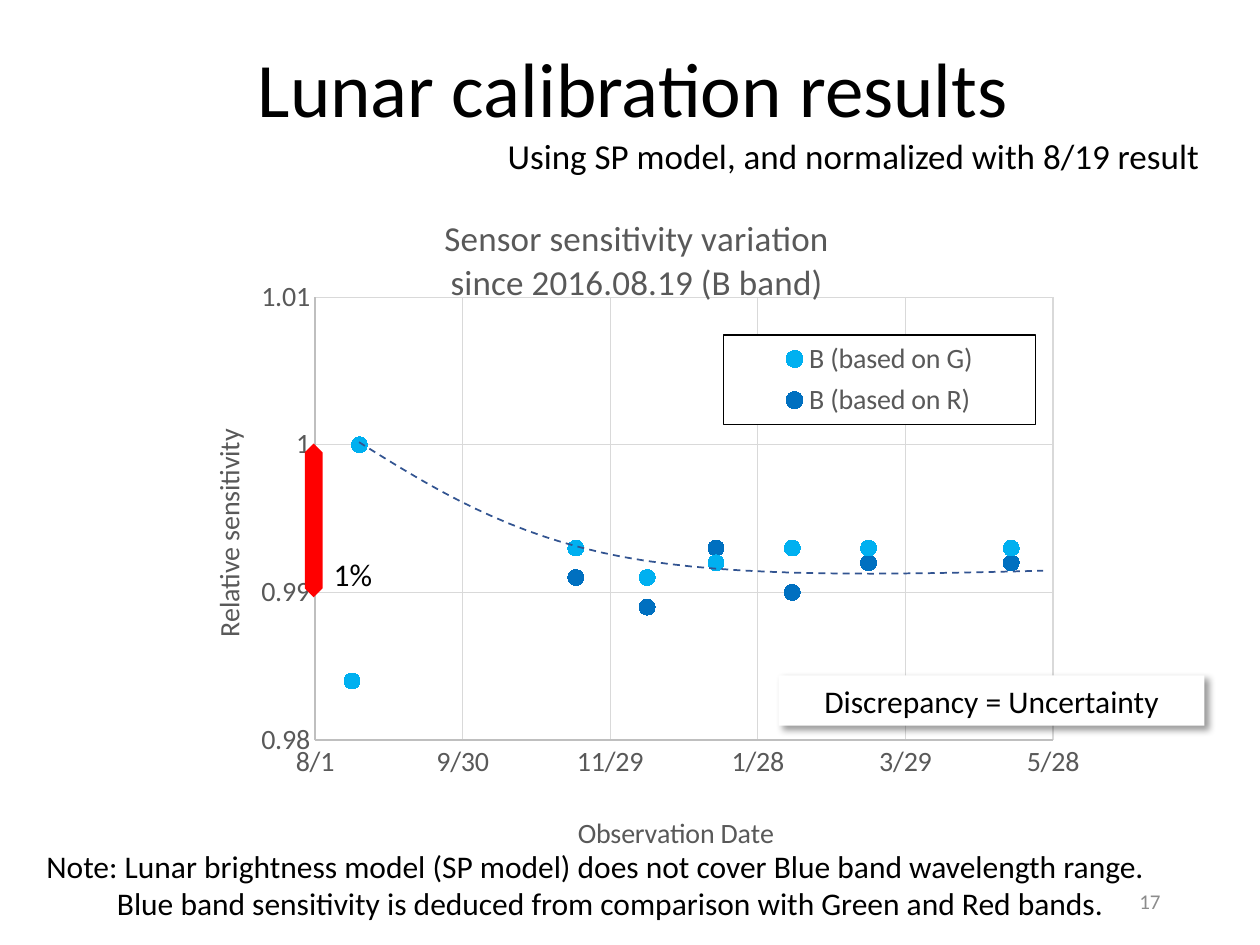
from lxml.etree import SubElement
from pptx import Presentation
from pptx.chart.data import XyChartData
from pptx.dml.color import RGBColor
from pptx.enum.chart import XL_CHART_TYPE, XL_LEGEND_POSITION, XL_MARKER_STYLE, XL_TICK_MARK
from pptx.enum.dml import MSO_LINE
from pptx.enum.shapes import MSO_SHAPE
from pptx.enum.text import MSO_ANCHOR, MSO_AUTO_SIZE, PP_ALIGN
from pptx.oxml import parse_xml
from pptx.oxml.ns import nsdecls, qn
from pptx.util import Inches, Pt

FONT = "Calibri"
BLACK = RGBColor(0x00, 0x00, 0x00)
WHITE = RGBColor(0xFF, 0xFF, 0xFF)
RED = RGBColor(0xFF, 0x00, 0x00)
CHART_TEXT = RGBColor(0x59, 0x59, 0x59)
AXIS_LINE = RGBColor(0xBF, 0xBF, 0xBF)
GRID_LINE = RGBColor(0xD9, 0xD9, 0xD9)
PAGE_GRAY = RGBColor(0x8C, 0x8C, 0x8C)
TREND_BLUE = RGBColor(0x32, 0x54, 0x91)

FIRST_DATE = 42583
OBSERVATION_DAYS = [15, 18, 106, 135, 163, 194, 225, 283]
BANDS = [
    ("B (based on G)", RGBColor(0x00, 0xB0, 0xF0),
     [0.984, 1, 0.993, 0.991, 0.992, 0.993, 0.993, 0.993]),
    ("B (based on R)", RGBColor(0x00, 0x70, 0xC0),
     [0.964, 1, 0.991, 0.989, 0.993, 0.99, 0.992, 0.992]),
]
TREND_START = (2.85, 3.51)
TREND_CURVES = [
    [(3.44, 3.88), (4.04, 4.25), (4.94, 4.42)],
    [(5.85, 4.59), (7.06, 4.56), (8.28, 4.53)],
]


def style_font(font, size, color):
    font.name = FONT
    font.size = Pt(size)
    font.bold = False
    font.color.rgb = color


def write_lines(frame, lines, size, color=BLACK, align=PP_ALIGN.LEFT):
    for index, line in enumerate(lines):
        paragraph = frame.paragraphs[0] if index == 0 else frame.add_paragraph()
        paragraph.alignment = align
        run = paragraph.add_run()
        run.text = line
        style_font(run.font, size, color)


def add_text(slide, box, lines, size, color=BLACK, align=PP_ALIGN.LEFT):
    frame = slide.shapes.add_textbox(*map(Inches, box)).text_frame
    frame.word_wrap = True
    frame.auto_size = MSO_AUTO_SIZE.SHAPE_TO_FIT_TEXT
    write_lines(frame, lines, size, color, align)
    return frame


def add_filled_shape(slide, kind, box, color):
    shape = slide.shapes.add_shape(kind, *map(Inches, box))
    shape.shadow.inherit = False
    shape.fill.solid()
    shape.fill.fore_color.rgb = color
    shape.line.fill.background()
    return shape


def place_part(part, predecessor, x, y, w=None, h=None, inner=False):
    layout = part.find(qn("c:layout"))
    if layout is None:
        layout = parse_xml(f"<c:layout {nsdecls('c')}/>")
        previous = part.find(qn(predecessor))
        part.insert(0 if previous is None else part.index(previous) + 1, layout)
    manual = SubElement(layout, qn("c:manualLayout"))
    settings = [("layoutTarget", "inner" if inner else None),
                ("xMode", "edge"), ("yMode", "edge"),
                ("x", x), ("y", y), ("w", w), ("h", h)]
    for tag, value in settings:
        if value is not None:
            SubElement(manual, qn(f"c:{tag}")).set("val", str(value))


def style_axis(axis, title, low, high, step, title_x, title_y):
    axis.minimum_scale, axis.maximum_scale, axis.major_unit = low, high, step
    axis.major_tick_mark = axis.minor_tick_mark = XL_TICK_MARK.NONE
    axis.has_major_gridlines = True
    for line, color in ((axis.format.line, AXIS_LINE),
                        (axis.major_gridlines.format.line, GRID_LINE)):
        line.color.rgb = color
        line.width = Pt(0.75)
    style_font(axis.tick_labels.font, 16, CHART_TEXT)
    write_lines(axis.axis_title.text_frame, [title], 16, CHART_TEXT, PP_ALIGN.CENTER)
    place_part(axis.axis_title._element, "c:tx", title_x, title_y)


def style_legend(chart):
    chart.has_legend = True
    legend = chart.legend
    legend.position = XL_LEGEND_POSITION.TOP
    legend.include_in_layout = False
    style_font(legend.font, 16, CHART_TEXT)
    place_part(legend._element, "c:legendPos", 0.6, 0.22, 0.33, 0.13)
    border = parse_xml(
        f'<c:spPr {nsdecls("c", "a")}><a:solidFill><a:srgbClr val="{WHITE}"/></a:solidFill>'
        f'<a:ln w="9525"><a:solidFill><a:srgbClr val="{BLACK}"/></a:solidFill></a:ln></c:spPr>')
    legend._element.find(qn("c:txPr")).addprevious(border)


def add_sensitivity_chart(slide):
    data = XyChartData()
    for name, _, sensitivities in BANDS:
        band = data.add_series(name)
        for day, sensitivity in zip(OBSERVATION_DAYS, sensitivities):
            band.add_data_point(FIRST_DATE + day, sensitivity)
    chart = slide.shapes.add_chart(
        XL_CHART_TYPE.XY_SCATTER, *map(Inches, (1.25, 1.46, 7.49, 5.45)), data).chart
    style_font(chart.font, 16, BLACK)

    chart.has_title = True
    write_lines(chart.chart_title.text_frame,
                ["Sensor sensitivity variation", "since 2016.08.19 (B band)"],
                20, CHART_TEXT, PP_ALIGN.CENTER)
    place_part(chart.chart_title._element, "c:tx", 0.3, 0.04)
    place_part(chart._chartSpace.chart.plotArea, "c:tx", 0.167, 0.165, 0.782, 0.645, inner=True)

    dates, sensitivity_axis = chart.category_axis, chart.value_axis
    style_axis(dates, "Observation Date", FIRST_DATE, FIRST_DATE + 300, 60, 0.44, 0.91)
    dates.tick_labels.number_format = "m/d"
    dates.tick_labels.number_format_is_linked = False
    style_axis(sensitivity_axis, "Relative sensitivity", 0.98, 1.01, 0.01, 0.05, 0.35)
    rotation = sensitivity_axis.axis_title.text_frame._txBody.bodyPr
    rotation.set("rot", "-5400000")
    rotation.set("vert", "horz")

    plot = chart.plots[0]
    plot.vary_by_categories = False
    for band, (_, color, _) in zip(plot.series, BANDS):
        band.smooth = False
        band.format.line.fill.background()
        band.marker.style = XL_MARKER_STYLE.CIRCLE
        band.marker.size = 9
        band.marker.format.fill.solid()
        band.marker.format.fill.fore_color.rgb = color
        band.marker.format.line.color.rgb = color
    style_legend(chart)


def curve_points(start, curves, steps=16):
    for first, second, end in curves:
        for step in range(1, steps + 1):
            t = step / steps
            weights = ((1 - t) ** 3, 3 * t * (1 - t) ** 2, 3 * t ** 2 * (1 - t), t ** 3)
            corners = (start, first, second, end)
            yield tuple(Inches(sum(weight * corner[axis] for weight, corner in zip(weights, corners)))
                        for axis in (0, 1))
        start = end


def add_trend(slide):
    builder = slide.shapes.build_freeform(*map(Inches, TREND_START))
    builder.add_line_segments(list(curve_points(TREND_START, TREND_CURVES)), close=False)
    trend = builder.convert_to_shape()
    trend.shadow.inherit = False
    trend.fill.background()
    trend.line.color.rgb = TREND_BLUE
    trend.line.width = Pt(1)
    trend.line.dash_style = MSO_LINE.DASH


def add_callout(slide):
    callout = add_filled_shape(slide, MSO_SHAPE.RECTANGLE, (6.18, 5.36, 3.38, 0.4), WHITE)
    callout.text_frame.word_wrap = True
    write_lines(callout.text_frame, ["Discrepancy = Uncertainty"], 18, align=PP_ALIGN.CENTER)
    effects = callout._element.spPr.find(qn("a:effectLst"))
    effects.append(parse_xml(
        f'<a:outerShdw {nsdecls("a")} blurRad="{Pt(4)}" dist="{Pt(3)}" dir="2700000" '
        f'algn="tl" rotWithShape="0"><a:srgbClr val="{BLACK}"><a:alpha val="40000"/>'
        '</a:srgbClr></a:outerShdw>'))


def main():
    deck = Presentation()
    deck.slide_width, deck.slide_height = Inches(10), Inches(7.5)
    slide = deck.slides.add_slide(deck.slide_layouts[5])

    title = slide.shapes.title
    title.left, title.top, title.width, title.height = map(Inches, (0.34, 0.27, 9.37, 0.84))
    write_lines(title.text_frame, ["Lunar calibration results"], 44, align=PP_ALIGN.CENTER)

    add_sensitivity_chart(slide)
    note = add_text(slide, (0.27, 6.67, 9.5, 0.71), [
        "Note: Lunar brightness model (SP model) does not cover Blue band wavelength range.",
        "Blue band sensitivity is deduced from comparison with Green and Red bands."], 18)
    note.paragraphs[1]._p.get_or_add_pPr().set("marL", str(Inches(0.56)))
    add_callout(slide)
    add_trend(slide)
    one_percent = add_filled_shape(slide, MSO_SHAPE.UP_DOWN_ARROW, (2.42, 3.52, 0.14, 1.22), RED)
    one_percent.adjustments[0] = 0.5
    one_percent.adjustments[1] = 1.74
    add_text(slide, (2.55, 4.36, 0.59, 0.4), ["1%"], 18)
    page = add_text(slide, (7.06, 6.95, 2.25, 0.4), ["17"], 12, PAGE_GRAY, PP_ALIGN.RIGHT)
    page.auto_size = MSO_AUTO_SIZE.NONE
    page.vertical_anchor = MSO_ANCHOR.MIDDLE
    add_text(slide, (3.78, 1.02, 5.99, 0.44),
             ["Using SP model, and normalized with 8/19 result"], 20, align=PP_ALIGN.CENTER)
    deck.save("out.pptx")


if __name__ == "__main__":
    main()
